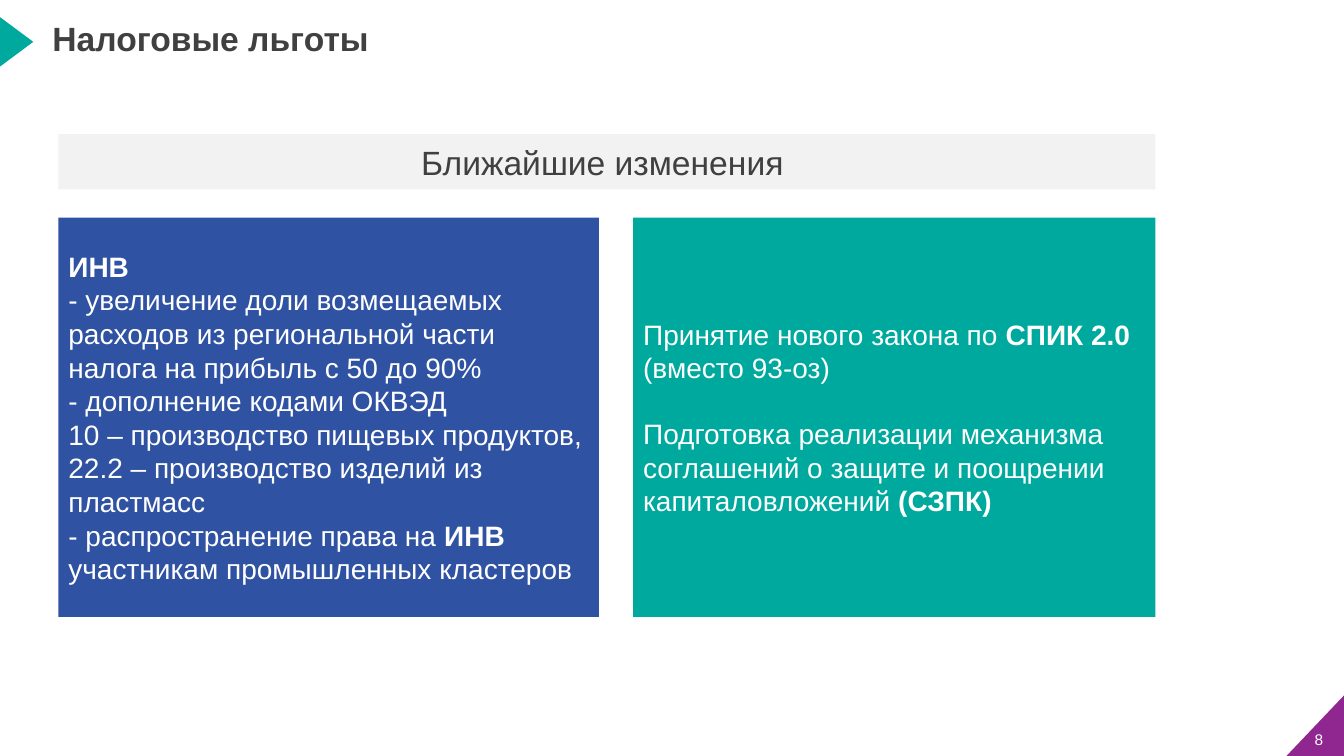
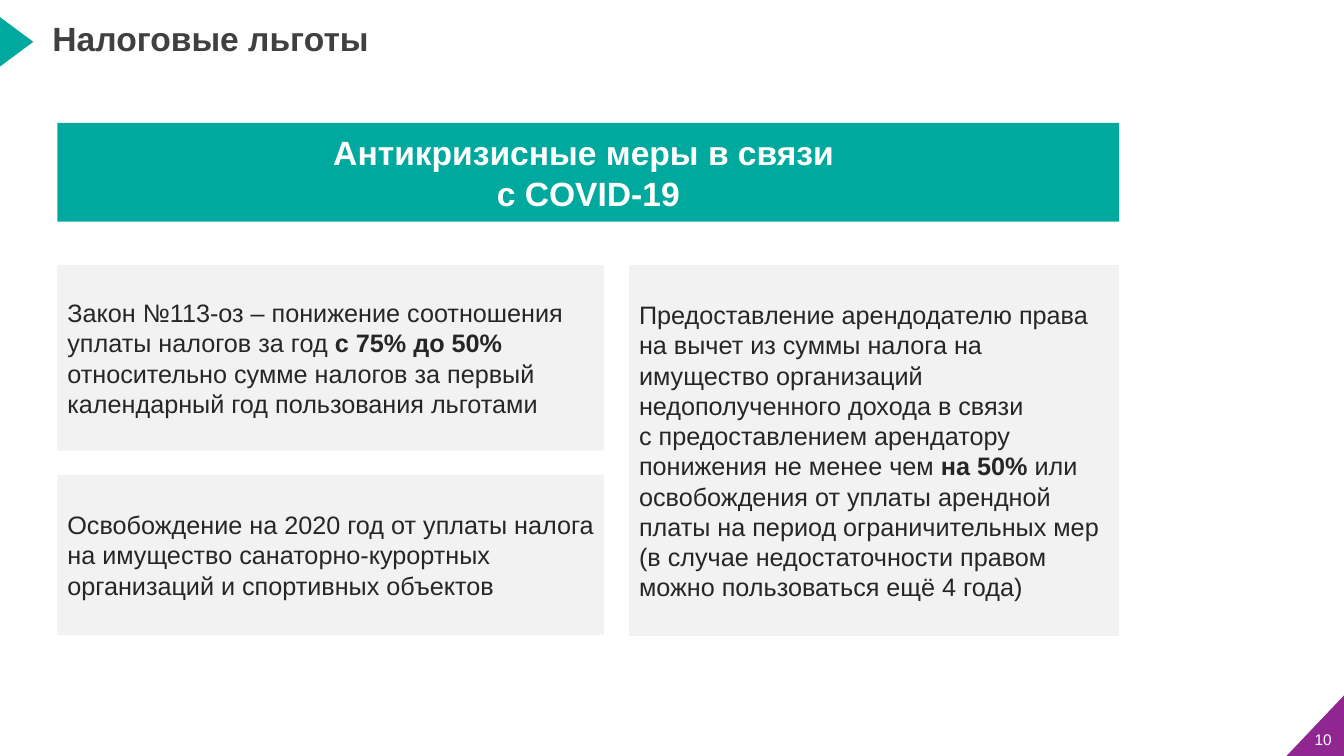
from dataclasses import dataclass

from pptx import Presentation
from pptx.dml.color import RGBColor
from pptx.enum.shapes import MSO_SHAPE
from pptx.enum.text import MSO_ANCHOR, MSO_AUTO_SIZE, PP_ALIGN
from pptx.presentation import Presentation as Deck
from pptx.shapes.autoshape import Shape
from pptx.slide import Slide
from pptx.text.text import TextFrame
from pptx.util import Inches, Pt

RECTANGLE = MSO_SHAPE.RECTANGLE
TRIANGLE = MSO_SHAPE.ISOSCELES_TRIANGLE
TOP, MIDDLE = MSO_ANCHOR.TOP, MSO_ANCHOR.MIDDLE
LEFT, CENTER = PP_ALIGN.LEFT, PP_ALIGN.CENTER
NO_AUTO_SIZE = MSO_AUTO_SIZE.NONE

FONT = "Arial"
COLORS = {
    "teal": "00A99D",
    "purple": "902790",
    "blue": "2F52A2",
    "light": "F2F2F2",
    "heading": "404040",
    "text": "262626",
    "white": "FFFFFF",
}
SLIDE_WIDTH, SLIDE_HEIGHT = 13.33, 7.5
TITLE_ONLY_LAYOUT = 5


@dataclass(frozen=True)
class TextStyle:
    size: int
    color: str
    bold: bool = False
    align: PP_ALIGN = LEFT
    gap: int = 0  # points between paragraphs


@dataclass(frozen=True)
class Panel:
    left: float
    top: float
    width: float
    height: float
    fill: str
    style: TextStyle
    paragraphs: tuple[str, ...]  # **marks** enclose bold words


@dataclass(frozen=True)
class Page:
    title: str
    number: int
    panels: tuple[Panel, ...]


TITLE = TextStyle(24, "heading", bold=True)
NUMBER = TextStyle(11, "white")
SUBTITLE = TextStyle(24, "heading", align=CENTER)
BANNER = TextStyle(24, "white", bold=True, align=CENTER)
COLORED_LIST = TextStyle(20, "white")
COLORED_NOTES = TextStyle(20, "white", gap=23)
MEASURE = TextStyle(18, "text")

PAGES = (
    Page("Налоговые льготы", 8, (
        Panel(0.58, 1.33, 10.88, 0.55, "light", SUBTITLE, ("Ближайшие изменения ",)),
        Panel(0.58, 2.16, 5.36, 3.96, "blue", COLORED_LIST, (
            "**ИНВ**",
            "- увеличение доли возмещаемых расходов из региональной части "
            "налога на прибыль с 50 до 90%",
            "- дополнение кодами ОКВЭД",
            "10 – производство пищевых продуктов, "
            "22.2 – производство изделий из пластмасс",
            "- распространение права на **ИНВ** участникам промышленных кластеров",
        )),
        Panel(6.28, 2.16, 5.18, 3.96, "teal", COLORED_NOTES, (
            "Принятие нового закона по **СПИК 2.0** (вместо 93-оз)",
            "Подготовка реализации механизма соглашений о защите и поощрении "
            "капиталовложений **(СЗПК)**",
        )),
    )),
    Page("Налоговые льготы", 10, (
        Panel(0.57, 1.22, 10.53, 0.98, "teal", BANNER, (
            "Антикризисные меры в связи ",
            "с COVID-19",
        )),
        Panel(0.57, 2.63, 5.42, 1.84, "light", MEASURE, (
            "Закон №113-оз – понижение соотношения уплаты налогов за год "
            "**с 75% до 50%** относительно сумме налогов за первый "
            "календарный год пользования льготами",
        )),
        Panel(0.57, 4.71, 5.42, 1.59, "light", MEASURE, (
            "Освобождение на 2020 год от уплаты налога на имущество "
            "санаторно-курортных организаций и спортивных объектов",
        )),
        Panel(6.24, 2.63, 4.86, 3.68, "light", MEASURE, (
            "Предоставление арендодателю права на вычет из суммы налога на "
            "имущество организаций недополученного дохода в связи",
            "с предоставлением арендатору понижения не менее чем **на 50%** "
            "или освобождения от уплаты арендной платы на период "
            "ограничительных мер (в случае недостаточности правом "
            "можно пользоваться ещё 4 года)",
        )),
    )),
)


def color(name: str) -> RGBColor:
    return RGBColor.from_string(COLORS[name])


def paint(shape: Shape, fill: str) -> None:
    shape.shadow.inherit = False
    shape.fill.solid()
    shape.fill.fore_color.rgb = color(fill)
    shape.line.fill.background()


def write(frame: TextFrame, paragraphs: tuple[str, ...], style: TextStyle,
          anchor: MSO_ANCHOR = TOP) -> None:
    frame.word_wrap = True
    frame.auto_size = NO_AUTO_SIZE
    frame.vertical_anchor = anchor
    for index, text in enumerate(paragraphs):
        paragraph = frame.add_paragraph() if index else frame.paragraphs[0]
        paragraph.alignment = style.align
        paragraph.space_before = Pt(style.gap if index else 0)
        font = paragraph.font
        font.name, font.size, font.bold = FONT, Pt(style.size), style.bold
        font.color.rgb = color(style.color)
        # Every second piece lies between bold marks
        for position, piece in enumerate(text.split("**")):
            if piece:
                run = paragraph.add_run()
                run.text = piece
                if position % 2:
                    run.font.bold = True


def add_frame(slide: Slide, page: Page) -> None:
    # Title with its pointer at the left edge
    pointer = slide.shapes.add_shape(
        TRIANGLE, Inches(-0.08), Inches(0.25), Inches(0.49), Inches(0.33))
    pointer.rotation = 90
    paint(pointer, "teal")
    title = slide.shapes.title
    title.left, title.top = Inches(0.42), Inches(0.13)
    title.width, title.height = Inches(11.04), Inches(0.5)
    write(title.text_frame, (page.title,), TITLE)

    # Page number on the corner
    right, bottom = Inches(SLIDE_WIDTH), Inches(SLIDE_HEIGHT)
    builder = slide.shapes.build_freeform(Inches(12.76), bottom)
    builder.add_line_segments([(right, Inches(6.9)), (right, bottom)])
    paint(builder.convert_to_shape(), "purple")
    number = slide.shapes.add_textbox(
        Inches(12.94), Inches(7.14), Inches(0.41), Inches(0.31))
    write(number.text_frame, (str(page.number),), NUMBER)
    number.text_frame.paragraphs[0].line_spacing = Pt(17)


def add_panel(slide: Slide, panel: Panel) -> None:
    shape = slide.shapes.add_shape(
        RECTANGLE, Inches(panel.left), Inches(panel.top),
        Inches(panel.width), Inches(panel.height))
    paint(shape, panel.fill)
    write(shape.text_frame, panel.paragraphs, panel.style, MIDDLE)


def add_page(presentation: Deck, page: Page) -> None:
    slide = presentation.slides.add_slide(
        presentation.slide_layouts[TITLE_ONLY_LAYOUT])
    add_frame(slide, page)
    for panel in page.panels:
        add_panel(slide, panel)


def main() -> None:
    presentation = Presentation()
    presentation.slide_width = Inches(SLIDE_WIDTH)
    presentation.slide_height = Inches(SLIDE_HEIGHT)
    for page in PAGES:
        add_page(presentation, page)
    presentation.save("out.pptx")


if __name__ == "__main__":
    main()
